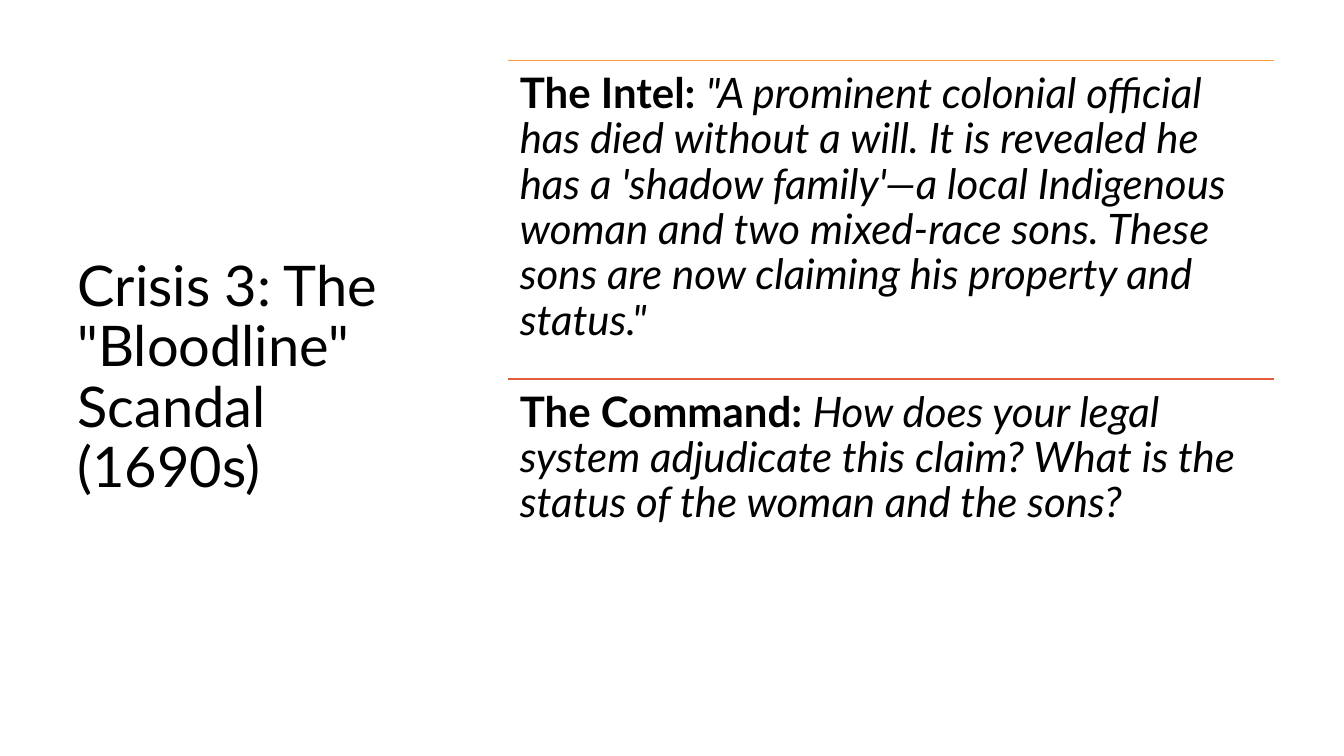
import dataclasses

import pptx
import pptx.dml.color
import pptx.enum.shapes
import pptx.enum.text
import pptx.oxml.ns
import pptx.slide
import pptx.text.text
import pptx.util
from lxml import etree

Cm = pptx.util.Cm
FONT = "Lato"
HUES = {"ink": "000000", "amber": "FA9A42", "red": "E15C3D"}
TOP, LEFT, WIDE, STEP = 1.52, 12.8, 19.3, 8.03


@dataclasses.dataclass
class Entry:
    head: str
    body: str
    hue: str


ENTRIES = [
    Entry(
        "The Intel: ",
        "\"A prominent colonial official has died without a will. It is revealed "
        "he has a 'shadow family'—a local Indigenous woman and two mixed-race "
        "sons. These sons are now claiming his property and status.\"",
        "amber",
    ),
    Entry(
        "The Command: ",
        "How does your legal system adjudicate this claim? "
        "What is the status of the woman and the sons?",
        "red",
    ),
]


def color(name: str) -> pptx.dml.color.RGBColor:
    return pptx.dml.color.RGBColor.from_string(HUES[name])


def style(run: pptx.text.text._Run, size: int,
          bold: bool = False, slant: bool = False) -> None:
    font = run.font
    font.name, font.size = FONT, pptx.util.Pt(size)
    font.bold, font.italic = bold, slant
    font.color.rgb = color("ink")


def add_title(slide: pptx.slide.Slide, text: str) -> None:
    title = slide.shapes.title
    title.left, title.top = Cm(1.7), Cm(TOP)
    title.width, title.height = Cm(9.7), Cm(2 * STEP)
    frame = title.text_frame
    frame.text = text
    frame.word_wrap = True
    frame.auto_size = pptx.enum.text.MSO_AUTO_SIZE.NONE
    frame.vertical_anchor = pptx.enum.text.MSO_ANCHOR.MIDDLE
    para = frame.paragraphs[0]
    para.alignment = pptx.enum.text.PP_ALIGN.LEFT
    para.line_spacing = 0.9
    style(para.runs[0], 40)


def add_entry(slide: pptx.slide.Slide, entry: Entry, top: float) -> None:
    # Rule above the text
    rule = slide.shapes.add_connector(
        pptx.enum.shapes.MSO_CONNECTOR.STRAIGHT,
        Cm(LEFT), Cm(top), Cm(LEFT + WIDE), Cm(top))
    rule.line.color.rgb = color(entry.hue)
    rule.line.width = pptx.util.Pt(1)
    etree.SubElement(rule._element.spPr, pptx.oxml.ns.qn("a:effectLst"))

    # Bold heading followed by italic text
    box = slide.shapes.add_textbox(Cm(LEFT), Cm(top), Cm(WIDE), Cm(STEP))
    frame = box.text_frame
    frame.word_wrap = True
    frame.margin_left = frame.margin_right = Cm(0.3)
    frame.margin_top = frame.margin_bottom = Cm(0.3)
    para = frame.paragraphs[0]
    para.text = entry.head
    para.line_spacing = 0.9
    style(para.runs[0], 30, bold=True)
    body = para.add_run()
    body.text = entry.body
    style(body, 30, slant=True)


def main() -> None:
    deck = pptx.Presentation()
    deck.slide_width, deck.slide_height = Cm(33.87), Cm(19.05)
    slide = deck.slides.add_slide(deck.slide_layouts.get_by_name("Title Only"))
    add_title(slide, "Crisis 3: The \"Bloodline\" Scandal (1690s)")
    for index, entry in enumerate(ENTRIES):
        add_entry(slide, entry, TOP + index * STEP)
    deck.save("out.pptx")


if __name__ == "__main__":
    main()
